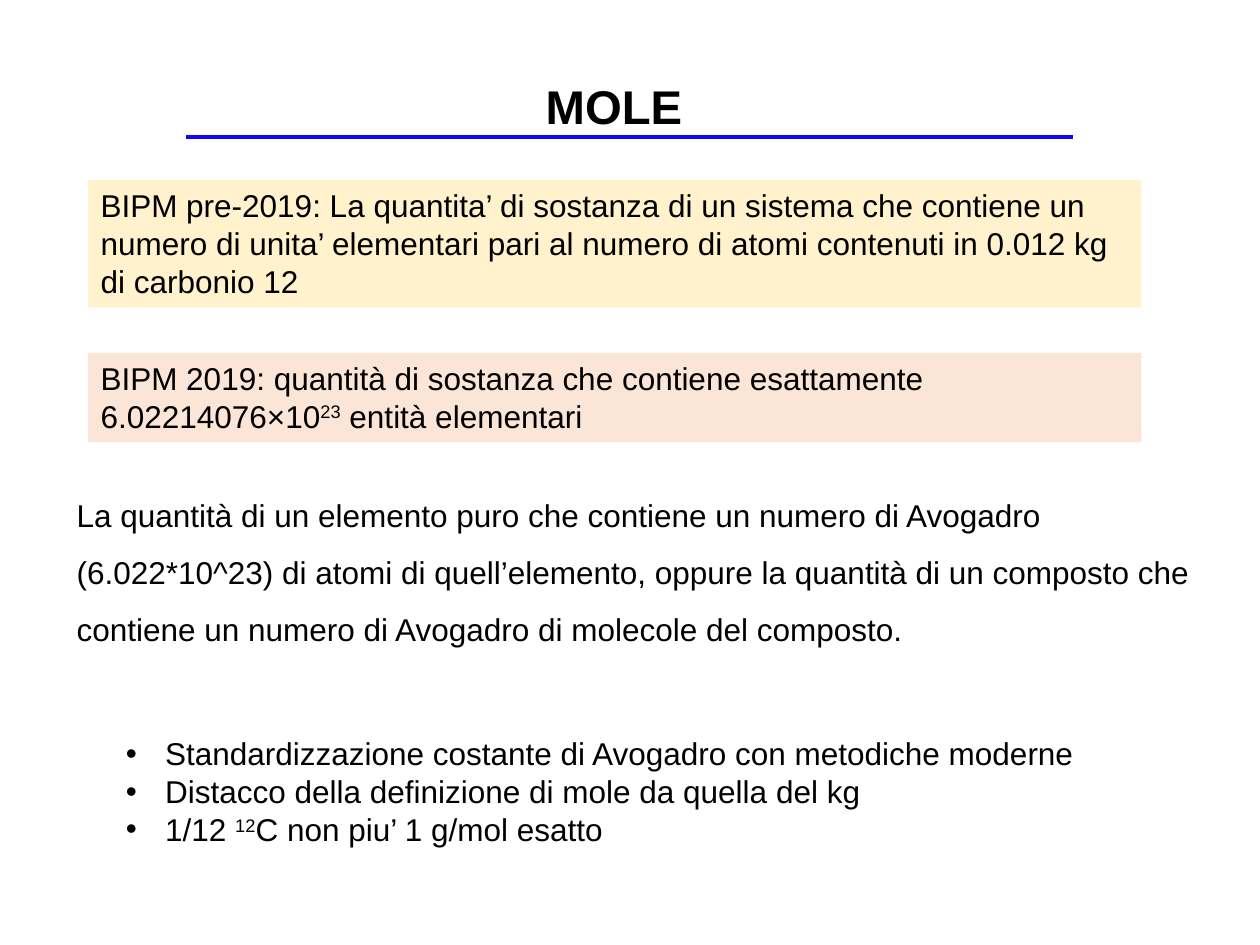
from pptx import Presentation
from pptx.dml.color import RGBColor
from pptx.enum.shapes import MSO_CONNECTOR
from pptx.enum.text import MSO_ANCHOR, MSO_AUTO_SIZE, PP_ALIGN
from pptx.oxml.ns import qn
from pptx.util import Pt
from lxml import etree

LINE = MSO_CONNECTOR.STRAIGHT
TOP = MSO_ANCHOR.TOP
GROW = MSO_AUTO_SIZE.SHAPE_TO_FIT_TEXT
LEFT, CENTER = PP_ALIGN.LEFT, PP_ALIGN.CENTER


def color(code):
    return RGBColor.from_string(code)


def add_text(area, paras, size=18, bold=False, align=LEFT, fill=None, wrap=True):
    """Add a text box; each paragraph is a list of runs, odd ones superscript."""
    box = slide.shapes.add_textbox(*[Pt(v) for v in area])
    if fill:
        box.fill.solid()
        box.fill.fore_color.rgb = color(fill)
    frame = box.text_frame
    frame.word_wrap = wrap
    frame.auto_size = GROW
    frame.vertical_anchor = TOP
    for i, parts in enumerate(paras):
        para = frame.add_paragraph() if i else frame.paragraphs[0]
        para.alignment = align
        for j, part in enumerate(parts):
            run = para.add_run()
            run.text = part
            run.font.name = "Arial"
            run.font.size = Pt(size)
            run.font.bold = bold
            run.font.color.rgb = color("000000")
            if j % 2:
                run.font._element.set("baseline", "30000")
    return frame


deck = Presentation()
deck.slide_width, deck.slide_height = Pt(720), Pt(540)
slide = deck.slides.add_slide(deck.slide_layouts[6])

# Title with its rule
rule = slide.shapes.add_connector(LINE, Pt(106.56), Pt(78.48), Pt(613.44), Pt(78.48))
rule.line.color.rgb = color("1206FA")
rule.line.width = Pt(2.5)
etree.SubElement(rule._element.spPr, qn("a:effectLst"))
title = add_text((153.36, 40.32, 417.6, 72.72), [["MOLE"]], 27, True, CENTER)
title.margin_right = Pt(29.7)

# Explanation
note = add_text((36.72, 269.28, 669.6, 105.12), [[
    "La quantità di un elemento puro che contiene un numero di Avogadro "
    "(6.022*10^23) di atomi di quell’elemento, oppure la quantità di un composto "
    "che contiene un numero di Avogadro di molecole del composto."]])
note.paragraphs[0].line_spacing = 1.5

# New and old definitions
add_text((50.4, 201.6, 601.92, 51.12), [[
    "BIPM 2019: quantità di sostanza che contiene esattamente 6.02214076×10",
    "23", " entità elementari"]], fill="FBE5D6")
add_text((50.4, 102.96, 601.92, 72.72), [[
    "BIPM pre-2019: La quantita’ di sostanza di un sistema che contiene un numero "
    "di unita’ elementari pari al numero di atomi contenuti in 0.012 kg "
    "di carbonio 12"]], fill="FFF2CC")

# Consequences as bullets
points = add_text((64.8, 416.16, 560.88, 72.72), [
    ["Standardizzazione costante di Avogadro con metodiche moderne"],
    ["Distacco della definizione di mole da quella del kg"],
    ["1/12 ", "12", "C non piu’ 1 g/mol esatto"],
], wrap=False)
for para in points.paragraphs:
    props = para._p.get_or_add_pPr()
    props.set("marL", str(Pt(22.5)))
    props.set("indent", str(-Pt(22.5)))
    etree.SubElement(props, qn("a:buFont")).set("typeface", "Arial")
    etree.SubElement(props, qn("a:buChar")).set("char", "•")

deck.save("out.pptx")
